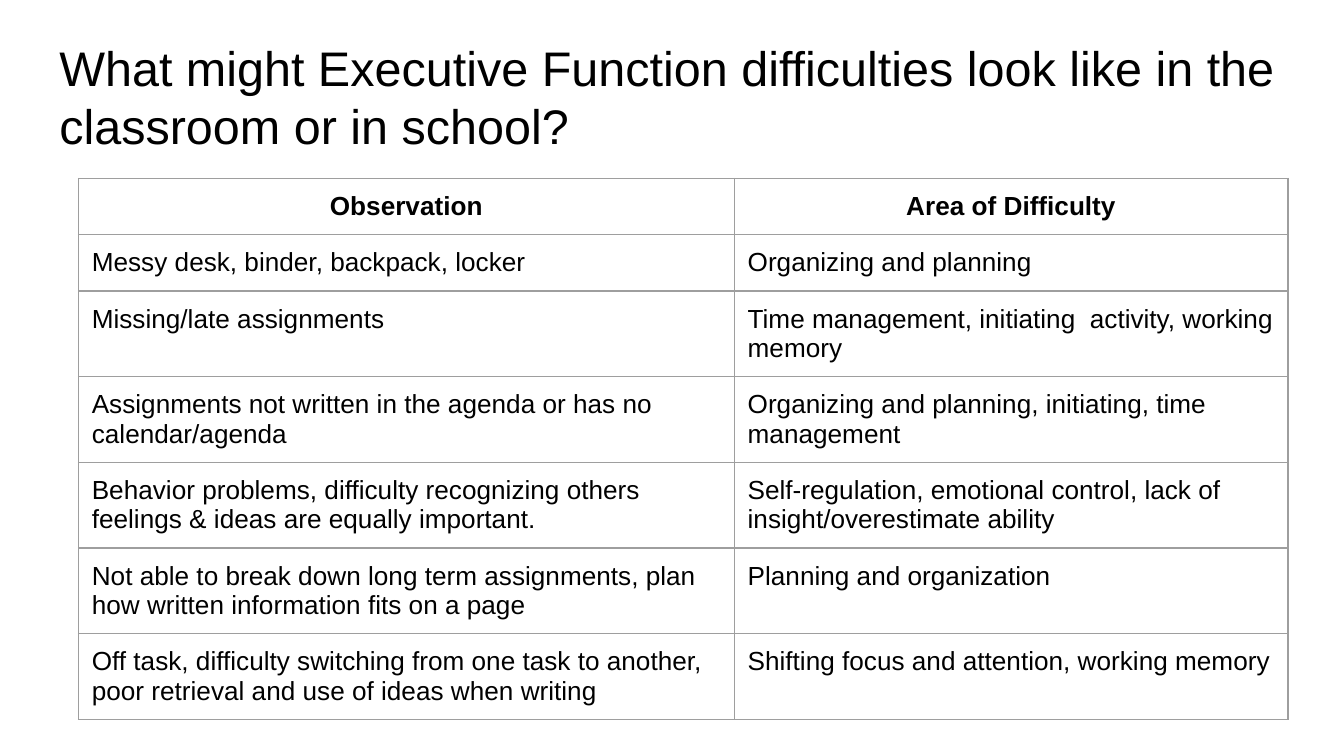
"""Build the slide on how executive function difficulties look in school."""
from itertools import product

from lxml.etree import SubElement
from pptx import Presentation
from pptx.dml.color import RGBColor
from pptx.enum.text import MSO_ANCHOR as Anchor, MSO_AUTO_SIZE as AutoSize, PP_ALIGN as Align
from pptx.oxml.ns import qn
from pptx.util import Inches, Pt

BLACK = RGBColor(0x00, 0x00, 0x00)
GREY = RGBColor(0x9E, 0x9E, 0x9E)
PADDING = Inches(0.1)

OBSERVATIONS = [
    ("Observation", "Area of Difficulty"),
    ("Messy desk, binder, backpack, locker", "Organizing and planning"),
    ("Missing/late assignments",
     "Time management, initiating  activity, working memory"),
    ("Assignments not written in the agenda or has no calendar/agenda",
     "Organizing and planning, initiating, time management"),
    ("Behavior problems, difficulty recognizing others feelings & ideas are equally important.",
     "Self-regulation, emotional control, lack of insight/overestimate ability"),
    ("Not able to break down long term assignments, plan how written information fits on a page",
     "Planning and organization"),
    ("Off task, difficulty switching from one task to another, "
     "poor retrieval and use of ideas when writing",
     "Shifting focus and attention, working memory"),
]


def write(frame, text, size=14, bold=False, align=Align.LEFT):
    frame.word_wrap = True
    frame.margin_left = frame.margin_right = PADDING
    frame.margin_top = frame.margin_bottom = PADDING
    frame.vertical_anchor = Anchor.TOP
    paragraph = frame.paragraphs[0]
    paragraph.alignment = align
    paragraph.line_spacing = 1.0
    run = paragraph.add_run()
    run.text = text
    run.font.name = "Arial"
    run.font.size = Pt(size)
    run.font.bold = bold
    run.font.color.rgb = BLACK


def draw_borders(cell):
    properties = cell._tc.get_or_add_tcPr()
    for position, side in enumerate(("lnL", "lnR", "lnT", "lnB")):
        line = properties.makeelement(qn(f"a:{side}"), {"w": str(Pt(0.75))})
        paint = SubElement(line, qn("a:solidFill"))
        SubElement(paint, qn("a:srgbClr"), val=str(GREY))
        properties.insert(position, line)


deck = Presentation()
deck.slide_width = Inches(10)
deck.slide_height = deck.slide_width * 9 // 16
column, row = deck.slide_width / 100, deck.slide_height / 100
slide = deck.slides.add_slide(deck.slide_layouts[5])

heading = slide.shapes.title
heading.left, heading.top = int(3.41 * column), int(3.2 * row)
heading.width, heading.height = int(93.2 * column), int(18.5 * row)
heading.text_frame.auto_size = AutoSize.NONE
write(heading.text_frame,
      "What might Executive Function difficulties look like in the classroom or in school?",
      size=26)

row_height = int(7.4 * row)
difficulties = slide.shapes.add_table(
    len(OBSERVATIONS), 2, int(5.83 * column), int(23.6 * row),
    int(90 * column), row_height * len(OBSERVATIONS)).table
difficulties.first_row = difficulties.horz_banding = False
for table_column, share in zip(difficulties.columns, (48.8, 41.2)):
    table_column.width = int(share * column)
for table_row in difficulties.rows:
    table_row.height = row_height

for r, c in product(range(len(OBSERVATIONS)), range(2)):
    cell = difficulties.cell(r, c)
    cell.margin_left = cell.margin_right = PADDING
    cell.margin_top = cell.margin_bottom = PADDING
    cell.vertical_anchor = Anchor.TOP
    cell.fill.background()
    draw_borders(cell)
    write(cell.text_frame, OBSERVATIONS[r][c], bold=r == 0,
          align=Align.CENTER if r == 0 else Align.LEFT)

deck.save("out.pptx")
